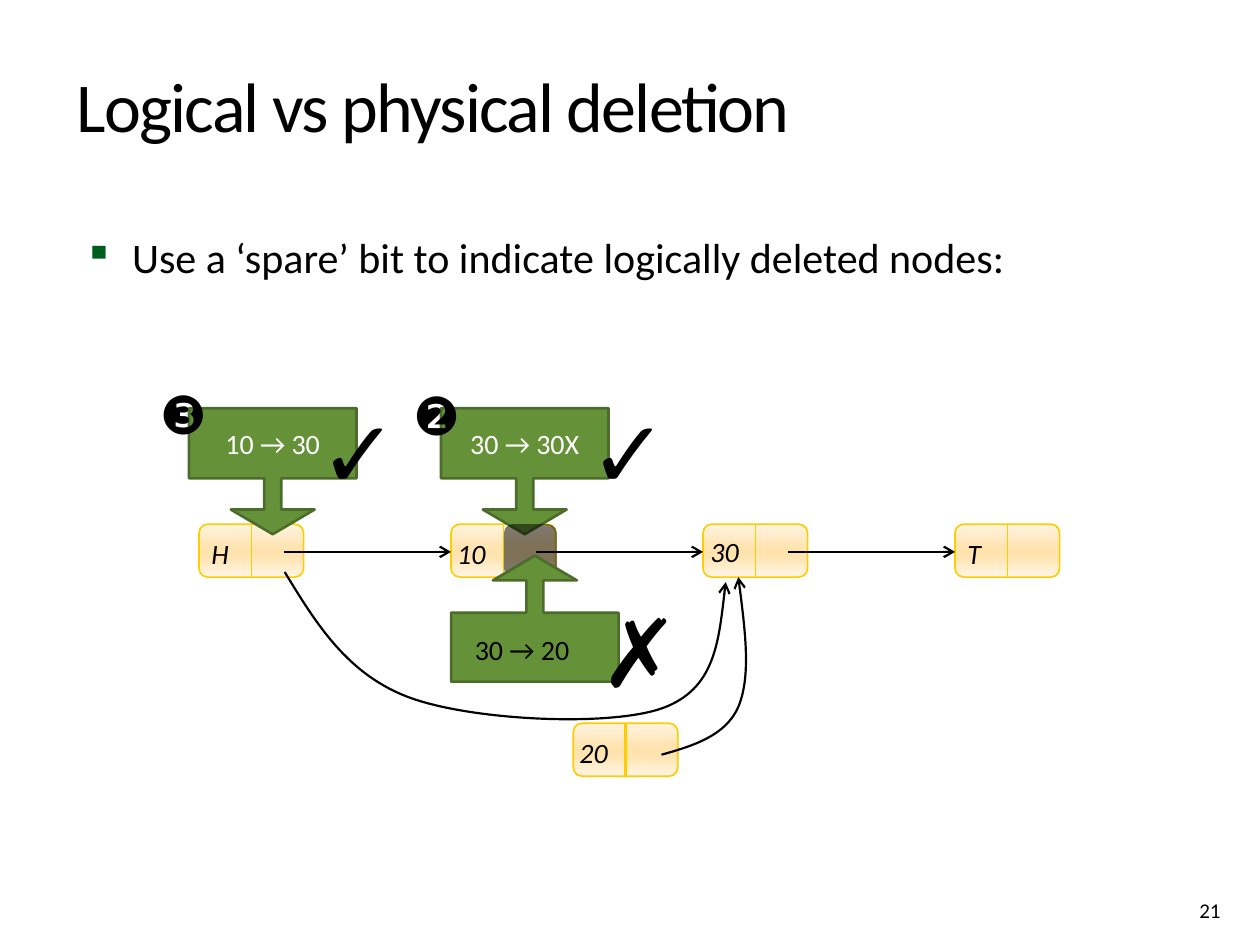
import lxml.etree
import pptx
import pptx.dml.color
import pptx.enum.shapes
import pptx.enum.text
import pptx.oxml
import pptx.oxml.ns
import pptx.util

Inches = pptx.util.Inches
Pt = pptx.util.Pt
qn = pptx.oxml.ns.qn
SHAPES = pptx.enum.shapes.MSO_SHAPE
ANCHOR = pptx.enum.text.MSO_ANCHOR
STRAIGHT = pptx.enum.shapes.MSO_CONNECTOR.STRAIGHT


def color(hex_string):
    return pptx.dml.color.RGBColor.from_string(hex_string)


def add_text(left, top, width, height, text, size, font="Calibri", italic=False, fit=True):
    """Add a one-run text box; a fitted box hugs its text without wrapping."""
    box = slide.shapes.add_textbox(Inches(left), Inches(top), Inches(width), Inches(height))
    frame = box.text_frame
    frame.word_wrap = not fit
    if fit:
        frame.auto_size = pptx.enum.text.MSO_AUTO_SIZE.SHAPE_TO_FIT_TEXT
    run = frame.paragraphs[0].add_run()
    run.text = text
    run.font.size = Pt(size)
    run.font.name = font
    run.font.italic = italic
    run.font.color.rgb = color("000000")
    return box


presentation = pptx.Presentation()
presentation.slide_width = Inches(10)
presentation.slide_height = Inches(7.5)
slide = presentation.slides.add_slide(presentation.slide_layouts[6])

# Title
title = add_text(0.51, 0.56, 8.82, 0.83, "Logical vs physical deletion", 40, fit=False)
paragraph = title.text_frame.paragraphs[0]
paragraph.line_spacing = Pt(40)
paragraph.runs[0].font._element.set("spc", "-100")

# Bullet
bullet = add_text(0.5, 1.71, 7.92, 1.21,
                  "Use a ‘spare’ bit to indicate logically deleted nodes:", 24, fit=False)
paragraph = bullet.text_frame.paragraphs[0]
paragraph.line_spacing = 1.2
paragraph.space_before = Pt(7)
properties = paragraph._p.get_or_add_pPr()
properties.set("marL", str(Inches(0.45)))
properties.set("indent", str(Inches(-0.38)))
bullet_color = lxml.etree.SubElement(properties, qn("a:buClr"))
lxml.etree.SubElement(bullet_color, qn("a:srgbClr"), val="005E1D")
lxml.etree.SubElement(properties, qn("a:buSzPct"), val="95000")
lxml.etree.SubElement(properties, qn("a:buChar"), char="▪")

# List nodes: left, top, divider width, then label with its position
NODE_WIDTH, NODE_HEIGHT, LINE_Y = 0.83, 0.42, 4.38
GRADIENT = [(0, "FFF4E1"), (40, "FFE5B4"), (50, "FFE3AD"), (65, "FFE5B4"), (100, "FFF6E7")]
nodes = [
    (1.58, 4.16, 0.94, "H", 1.58, 4.21, 0.39),
    (3.58, 4.16, 0.94, "10", 3.53, 4.21, 0.5),
    (5.58, 4.16, 0.94, "30", 5.54, 4.19, 0.5),
    (7.58, 4.16, 0.94, "T", 7.58, 4.21, 0.36),
    (4.55, 5.74, 1.5, "20", 4.5, 5.79, 0.51),
]
for left, top, divider_width, label, label_left, label_top, label_width in nodes:
    node = slide.shapes.add_shape(SHAPES.ROUNDED_RECTANGLE, Inches(left), Inches(top),
                                  Inches(NODE_WIDTH), Inches(NODE_HEIGHT))
    node.shadow.inherit = False
    node.line.color.rgb = color("FFCC00")
    node.line.width = Pt(0.94)
    node.fill.gradient()
    node.fill.gradient_angle = 270
    stops = node._element.spPr.find(".//" + qn("a:gsLst"))
    for stop in list(stops):
        stops.remove(stop)
    for position, shade in GRADIENT:
        stop = lxml.etree.SubElement(stops, qn("a:gs"), pos=str(position * 1000))
        lxml.etree.SubElement(stop, qn("a:srgbClr"), val=shade)

    middle = left + NODE_WIDTH / 2
    divider = slide.shapes.add_connector(STRAIGHT, Inches(middle), Inches(top),
                                         Inches(middle), Inches(top + NODE_HEIGHT))
    divider.line.color.rgb = color("FFCC00")
    divider.line.width = Pt(divider_width)
    lxml.etree.SubElement(divider._element.spPr, qn("a:effectLst"))
    add_text(label_left, label_top, label_width, 0.37, label, 16, italic=True)

# Links between neighbouring nodes
arrows = []
for start in (2.25, 4.25, 6.25):
    arrows.append(slide.shapes.add_connector(STRAIGHT, Inches(start), Inches(LINE_Y),
                                             Inches(start + 1.33), Inches(LINE_Y)))

# Callouts with the pointer updates: left, top, rotation, stem split, text
callouts = [
    (1.5, 3.24, 0, 0.557, "10 → 30"),
    (3.5, 3.24, 0, 0.557, "30 → 30X"),
    (3.58, 4.41, 180, 0.547, ""),
]
for left, top, rotation, split, text in callouts:
    if rotation:
        # Mark on the deleted node, beneath the upward callout
        mark = slide.shapes.add_shape(SHAPES.ROUNDED_RECTANGLE, Inches(4), Inches(4.16),
                                      Inches(0.42), Inches(0.42))
        mark.shadow.inherit = False
        mark.fill.solid()
        mark.fill.fore_color.rgb = color("000000")
        mark.line.fill.background()
        mark_color = mark._element.spPr.find(".//" + qn("a:srgbClr"))
        lxml.etree.SubElement(mark_color, qn("a:alpha"), val="50000")
    callout = slide.shapes.add_shape(SHAPES.DOWN_ARROW_CALLOUT, Inches(left), Inches(top),
                                     Inches(1.33), Inches(1))
    for index, value in enumerate((0.135, 0.333, 0.196, split)):
        callout.adjustments[index] = value
    callout.rotation = rotation
    callout.shadow.inherit = False
    callout.fill.solid()
    callout.fill.fore_color.rgb = color("659239")
    callout.line.color.rgb = color("4B6C2A")
    callout.line.width = Pt(1.5)
    if text:
        callout.text_frame.word_wrap = False
        callout.text_frame.vertical_anchor = ANCHOR.MIDDLE
        paragraph = callout.text_frame.paragraphs[0]
        paragraph.alignment = pptx.enum.text.PP_ALIGN.CENTER
        run = paragraph.add_run()
        run.text = text
        run.font.size = Pt(16)
        run.font.name = "Calibri"
        run.font.color.rgb = color("FFFFFF")

# Step numbers, outcomes and the text of the upward callout
add_text(1.17, 2.98, 0.57, 0.6, "❸", 30, "Noto Sans")
add_text(3.18, 2.99, 0.57, 0.6, "❷", 30, "Noto Sans")
add_text(2.44, 3.08, 0.79, 1, "✓", 54, "Noto Sans")
add_text(4.58, 3.08, 0.79, 1, "✓", 54, "Noto Sans")
add_text(3.67, 4.97, 1.16, 0.37, "30 → 20", 16)
add_text(4.67, 4.66, 0.68, 1, "✗", 54)

# Curved links: start point, then two control points and an end point per segment
curves = [
    [(5.25, 5.99), (5.5, 5.92), (5.76, 5.84), (5.86, 5.61),
     (5.96, 5.37), (5.91, 4.97), (5.86, 4.58)],
    [(2.26, 4.54), (2.51, 4.95), (2.76, 5.36), (3.26, 5.54), (3.76, 5.72),
     (4.84, 5.77), (5.26, 5.62), (5.67, 5.47), (5.71, 5.05), (5.76, 4.62)],
]
for curve in curves:
    points = [(Inches(x), Inches(y)) for x, y in curve]
    builder = slide.shapes.build_freeform(*points[0])
    builder.add_line_segments(points[1:], close=False)
    link = builder.convert_to_shape()
    link.shadow.inherit = False
    link.fill.background()
    # Turn each three straight segments into one Bezier segment
    segments = list(link._element.spPr.iter(qn("a:lnTo")))
    outline = segments[0].getparent()
    for first in range(0, len(segments), 3):
        bezier = lxml.etree.SubElement(outline, qn("a:cubicBezTo"))
        for segment in segments[first:first + 3]:
            bezier.append(segment[0])
            outline.remove(segment)
    arrows.append(link)

# Line style and arrowheads of all links
for arrow in arrows:
    arrow.line.color.rgb = color("000000")
    arrow.line.width = Pt(1.25)
    lxml.etree.SubElement(arrow.line._get_or_add_ln(), qn("a:tailEnd"), type="arrow")
    if arrow._element.spPr.find(qn("a:effectLst")) is None:
        lxml.etree.SubElement(arrow._element.spPr, qn("a:effectLst"))

# Slide number
number = add_text(9.42, 6.97, 0.5, 0.4, "21", 12, fit=False)
number.text_frame.vertical_anchor = ANCHOR.BOTTOM

presentation.save("out.pptx")
